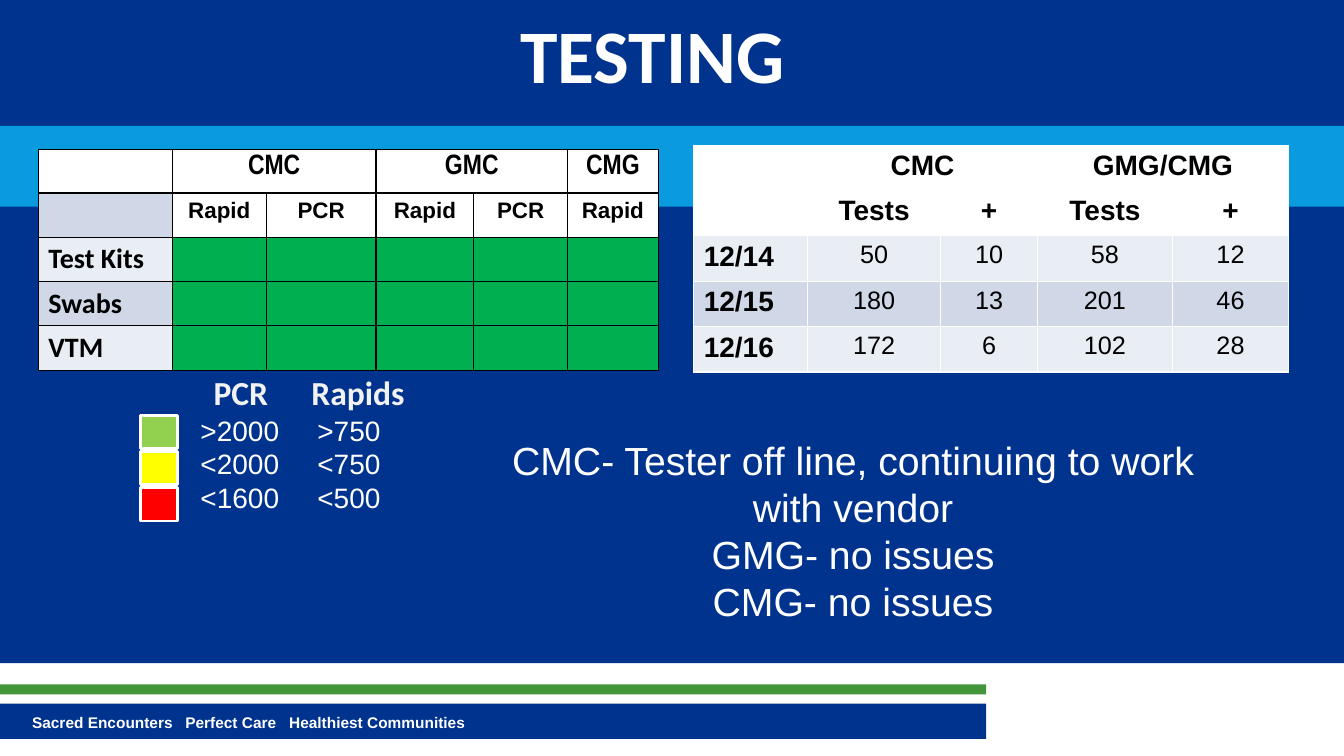
from dataclasses import dataclass

import pptx
import pptx.dml.color
import pptx.enum.shapes
import pptx.enum.text
import pptx.oxml
import pptx.util
from pptx.oxml.ns import nsdecls

Inches = pptx.util.Inches
Pt = pptx.util.Pt
ALIGN = pptx.enum.text.PP_ALIGN

NAVY, SKY, LEAF = "00338E", "099BDD", "439539"
WHITE, BLACK, PALE = "FFFFFF", "000000", "F2F2F2"
STOCKED, LIGHT_BAND, DARK_BAND = "00B050", "E9EDF4", "D0D8E8"


@dataclass
class Box:
    left: float
    top: float
    width: float
    height: float

    def lengths(self) -> list:
        return [Inches(v) for v in (self.left, self.top, self.width, self.height)]


@dataclass
class Cell:
    text: str = ""
    fill: str = WHITE
    size: float = 20
    font: str = "Arial"
    bold: bool = True
    centred: bool = True
    span: int = 1


def rgb(color: str) -> pptx.dml.color.RGBColor:
    return pptx.dml.color.RGBColor.from_string(color)


def write(frame, text: str, *, size: float, font: str = "Arial", color: str = WHITE,
          bold: bool = False, centred: bool = False, tabs: tuple = ()) -> None:
    """Fill a text frame with one paragraph per line of text."""
    frame.text = text
    for paragraph in frame.paragraphs:
        if tabs:
            stops = "".join(f'<a:tab pos="{Inches(t)}" algn="l"/>' for t in tabs)
            paragraph._p.get_or_add_pPr().append(
                pptx.oxml.parse_xml(f'<a:tabLst {nsdecls("a")}>{stops}</a:tabLst>'))
        paragraph.alignment = ALIGN.CENTER if centred else ALIGN.LEFT
        paragraph.font.size = Pt(size)
        paragraph.font.name = font
        paragraph.font.bold = bold
        paragraph.font.color.rgb = rgb(color)


def add_text(slide, box: Box, text: str, wrap: bool = True, **text_format) -> None:
    frame = slide.shapes.add_textbox(*box.lengths()).text_frame
    frame.word_wrap = wrap
    write(frame, text, **text_format)


def add_rectangle(slide, box: Box, fill: str, outline: str = "") -> None:
    rectangle = slide.shapes.add_shape(
        pptx.enum.shapes.MSO_SHAPE.RECTANGLE, *box.lengths())
    rectangle.shadow.inherit = False
    rectangle.fill.solid()
    rectangle.fill.fore_color.rgb = rgb(fill)
    if outline:
        rectangle.line.color.rgb = rgb(outline)
        rectangle.line.width = Pt(2)
    else:
        rectangle.line.fill.background()


def set_borders(cell, color: str) -> None:
    for side in ("lnL", "lnR", "lnT", "lnB"):
        cell._tc.get_or_add_tcPr().append(pptx.oxml.parse_xml(
            f'<a:{side} {nsdecls("a")} w="{Pt(1)}"><a:solidFill>'
            f'<a:srgbClr val="{color}"/></a:solidFill></a:{side}>'))


def add_grid(slide, left: float, top: float, widths: list[float], heights: list[float],
             rows: list[list[Cell]], border: str) -> None:
    box = Box(left, top, sum(widths), sum(heights))
    table = slide.shapes.add_table(len(heights), len(widths), *box.lengths()).table
    table.first_row = table.horz_banding = False
    for column, width in zip(table.columns, widths):
        column.width = Inches(width)
    for r, (height, row) in enumerate(zip(heights, rows)):
        table.rows[r].height = Inches(height)
        c = 0
        for content in row:
            for spanned in range(c, c + content.span):
                cell = table.cell(r, spanned)
                set_borders(cell, border)
                cell.fill.solid()
                cell.fill.fore_color.rgb = rgb(content.fill)
            start = table.cell(r, c)
            if content.span > 1:
                start.merge(table.cell(r, c + content.span - 1))
            if content.text:
                write(start.text_frame, content.text, size=content.size,
                      font=content.font, color=BLACK, bold=content.bold,
                      centred=content.centred)
            c += content.span


def supply_rows() -> list[list[Cell]]:
    sites = [Cell(name, font="Arial Narrow", span=span)
             for name, span in (("CMC", 2), ("GMC", 2), ("CMG", 1))]
    kinds = [Cell(kind, size=16) for kind in ("Rapid", "PCR", "Rapid", "PCR", "Rapid")]
    rows = [[Cell(), *sites], [Cell(fill=DARK_BAND), *kinds]]
    for i, supply in enumerate(("Test Kits", "Swabs", "VTM")):
        label = Cell(supply, (LIGHT_BAND, DARK_BAND)[i % 2], font="Calibri", centred=False)
        rows.append([label] + [Cell(fill=STOCKED) for _ in kinds])
    return rows


def result_rows() -> list[list[Cell]]:
    rows = [[Cell(), Cell("CMC", span=2), Cell("GMG/CMG", span=2)],
            [Cell()] + [Cell(heading) for heading in ("Tests", "+") * 2]]
    daily_counts = {"12/14": (50, 10, 58, 12),
                    "12/15": (180, 13, 201, 46),
                    "12/16": (172, 6, 102, 28)}
    for i, (day, counts) in enumerate(daily_counts.items()):
        band = (LIGHT_BAND, DARK_BAND)[i % 2]
        rows.append([Cell(day, band, centred=False)]
                    + [Cell(str(n), band, size=18, bold=False) for n in counts])
    return rows


def main() -> None:
    deck = pptx.Presentation()
    deck.slide_width, deck.slide_height = Inches(13.33), Inches(7.5)
    slide = deck.slides.add_slide(deck.slide_layouts[6])

    add_rectangle(slide, Box(0, 0, 13.33, 6.58), NAVY)
    add_rectangle(slide, Box(0, 6.98, 9.78, 0.35), NAVY)
    add_text(slide, Box(0.22, 7.03, 8.33, 0.29),
             "Sacred Encounters\tPerfect Care\tHealthiest Communities",
             size=11, bold=True, tabs=(1.52, 2.55))
    add_rectangle(slide, Box(0, 6.79, 9.78, 0.1), LEAF)
    add_text(slide, Box(1.12, 0.03, 10.7, 1.2), "TESTING",
             size=54, font="Calibri", bold=True, centred=True)
    add_rectangle(slide, Box(0, 1.25, 13.33, 0.8), SKY)

    add_grid(slide, 0.38, 1.48, [1.33, 0.93, 1.09, 0.97, 0.93, 0.9],
             [0.42] + [0.44] * 4, supply_rows(), BLACK)
    add_text(slide, Box(4.95, 4.28, 7.02, 1.99),
             "CMC- Tester off line, continuing to work with vendor\n"
             "GMG- no issues\nCMG- no issues", size=28, centred=True)
    add_grid(slide, 6.88, 1.44, [1.13, 1.32, 0.96, 1.34, 1.15],
             [0.45] * 5, result_rows(), WHITE)

    for i, level in enumerate(("92D050", "FFFF00", "FF0000")):
        add_rectangle(slide, Box(1.39, 4.12 + 0.36 * i, 0.37, 0.33), level, WHITE)
    add_text(slide, Box(1.89, 4.05, 5.63, 1.11),
             ">2000\t>750\n<2000\t<750\n<1600\t<500", size=20, tabs=(1.16,))
    for heading, left, width in (("PCR", 2.02, 0.75), ("Rapids", 2.99, 1.14)):
        add_text(slide, Box(left, 3.64, width, 0.5), heading, wrap=False,
                 size=24, font="Calibri", color=PALE, bold=True)

    deck.save("out.pptx")


if __name__ == "__main__":
    main()
